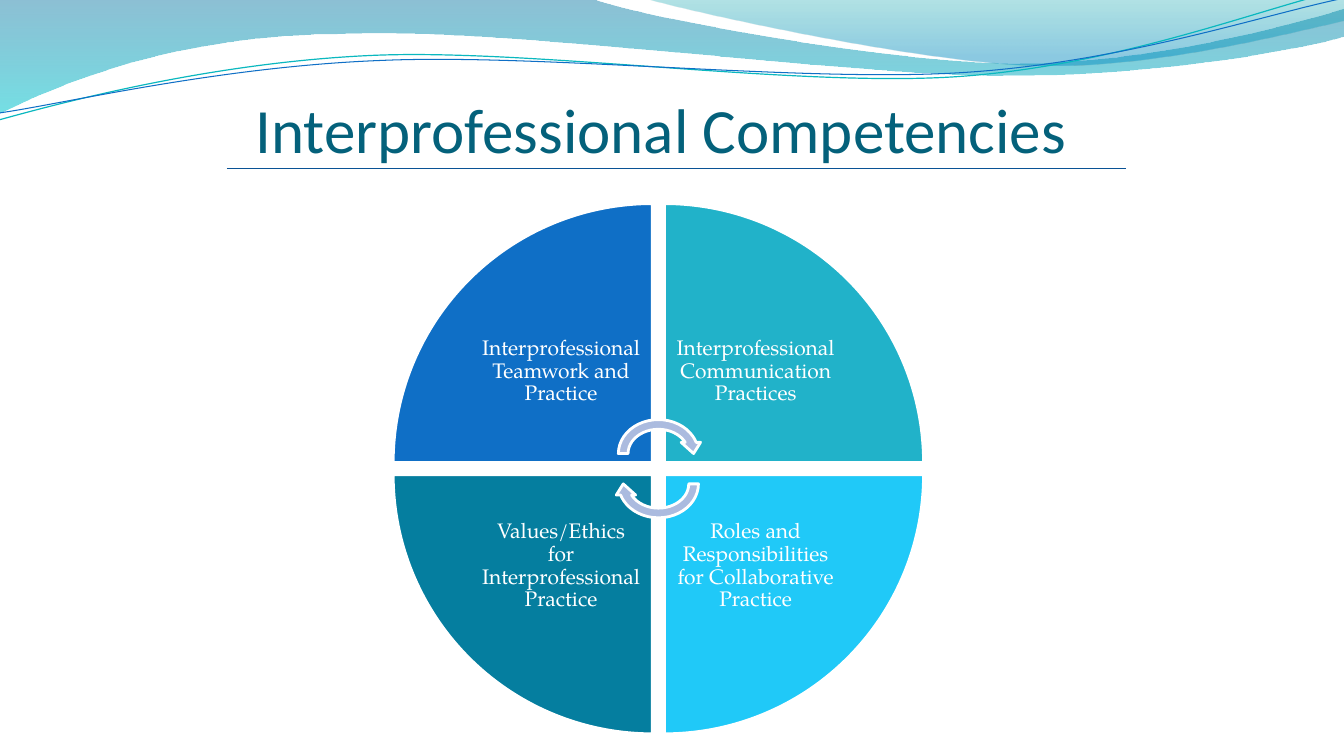
import math

from lxml import etree
from pptx import Presentation
from pptx.dml.color import RGBColor
from pptx.enum import shapes, text
from pptx.oxml import ns
from pptx.util import Inches, Pt

COLORS = {
    "white": "FFFFFF", "title": "04617B", "rule": "095295", "arrow": "ABBBDF",
    "blue": "0F6FC6", "teal": "21B2C9", "sky": "20C9F8", "petrol": "057E9F",
    "wave_blue": "0074A1", "wave_cyan": "00C6CF",
    "crest_teal": "00A1A9", "crest_blue": "008BBF", "line_teal": "0AB8BF",
}
BODY_FONT = "TeX Gyre Pagella"

WAVE = [(0, -0.01), (5.87, -0.01),
        (6.34, 0.17, 8.85, 0.63, 10.11, 0.63), (11.38, 0.63, 12.78, 0.26, 13.33, 0.09),
        (13.35, 0.36),
        (13.11, 0.44, 11.6, 0.76, 9.94, 0.75), (8.29, 0.75, 5.09, 0.28, 3.43, 0.34),
        (1.72, 0.35, 0.61, 0.83, -0.01, 1.13)]
CREST = [(6.39, -0.01),
         (6.79, 0.11, 9.09, 0.62, 10.25, 0.65), (11.41, 0.69, 12.82, 0.32, 13.33, 0.21),
         (13.33, 0)]
TEAL_LINE = [(-0.01, 1.19), (0.64, 1.01, 2.11, 0.62, 3.69, 0.55),
             (5.27, 0.48, 7.9, 0.87, 9.5, 0.76), (11.1, 0.65, 12.52, 0.08, 13.31, -0.1)]
BLUE_LINE = [(0, 1.12), (0.63, 1.03, 2.18, 0.66, 3.78, 0.6),
             (5.37, 0.53, 7.96, 0.82, 9.55, 0.72), (11.15, 0.62, 12.55, 0.14, 13.34, -0.02)]


def rgb(name):
    """Return the named colour."""
    return RGBColor.from_string(COLORS[name])


def turn(point, pivot, degrees):
    """Turn a point clockwise about a pivot."""
    a = math.radians(degrees)
    dx, dy = point[0] - pivot[0], point[1] - pivot[1]
    return (pivot[0] + dx * math.cos(a) - dy * math.sin(a),
            pivot[1] + dx * math.sin(a) + dy * math.cos(a))


def add_outline(s, left, top, path, close, pivot=(0, 0), tilt=0):
    """Draw a path of points and cubic curves, tilted about a pivot."""
    points = [turn(part[i:i + 2], pivot, tilt) for part in path
              for i in range(0, len(part), 2)]
    points = [(Inches(left + x), Inches(top + y)) for x, y in points]
    builder = s.shapes.build_freeform(*points[0], scale=1.0)
    builder.add_line_segments(points[1:], close=close)
    sp = builder.convert_to_shape()
    sp.shadow.inherit = False
    sp.rotation = -tilt % 360
    segments = iter(list(sp.element.iter(ns.qn("a:lnTo"))))
    for part in path[1:]:
        segment = next(segments)
        if len(part) == 6:
            curve = etree.Element(ns.qn("a:cubicBezTo"))
            segment.addprevious(curve)
            for step in (segment, next(segments), next(segments)):
                curve.append(step[0])
                step.getparent().remove(step)
    return sp


def add_waves(s, left, top):
    """Draw the banner of two gradient waves and two thin curves."""
    bands = [(WAVE, [("wave_blue", 0, 45), ("wave_cyan", 1, 55)]),
             (CREST, [("crest_teal", 0, 30), ("crest_blue", 0.8, 45)])]
    for path, stops in bands:
        sp = add_outline(s, left, top, path, True)
        sp.line.fill.background()
        sp.fill.gradient()
        sp.fill.gradient_angle = 270
        for stop, (color, position, _) in zip(sp.fill.gradient_stops, stops):
            stop.color.rgb = rgb(color)
            stop.position = position
        for clr, (_, _, opacity) in zip(sp.element.iter(ns.qn("a:srgbClr")), stops):
            etree.SubElement(clr, ns.qn("a:alpha"), val=str(opacity * 1000))
    curves = [(TEAL_LINE, "line_teal", 0.85, (6.65, 0.57)),
              (BLUE_LINE, "blue", 0.75, (6.67, 0.59))]
    for path, color, width, pivot in curves:
        sp = add_outline(s, left, top, path, False, pivot, 2.7)
        sp.fill.background()
        sp.line.color.rgb = rgb(color)
        sp.line.width = Pt(width)


def add_run(p, words, font, size, color):
    """Add one formatted run to a centred paragraph."""
    p.alignment = text.PP_ALIGN.CENTER
    r = p.add_run()
    r.text = words
    r.font.name = font
    r.font.size = Pt(size)
    r.font.color.rgb = rgb(color)


def add_title(s, left, top, width, height):
    """Fill the title placeholder and underline it."""
    sp = s.shapes.title
    sp.left, sp.top, sp.width, sp.height = map(Inches, (left, top, width, height))
    tf = sp.text_frame
    tf.auto_size = text.MSO_AUTO_SIZE.NONE
    tf.word_wrap = True
    tf.vertical_anchor = text.MSO_ANCHOR.BOTTOM
    tf.margin_left = tf.margin_right = tf.margin_bottom = 0
    tf.margin_top = Inches(0.05)
    add_run(tf.paragraphs[0], "Interprofessional Competencies", "Calibri", 45, "title")
    y = Inches(top + height + 0.02)
    rule = s.shapes.add_connector(shapes.MSO_CONNECTOR.STRAIGHT, Inches(left + 0.17), y,
                                  Inches(left + width + 0.14), y)
    rule.line.color.rgb = rgb("rule")
    rule.line.width = Pt(0.75)
    etree.SubElement(rule.element.spPr, ns.qn("a:effectLst"))


def add_part(s, kind, left, top, width, height, color, rotation):
    """Add a flat preset shape with a white edge."""
    sp = s.shapes.add_shape(kind, *map(Inches, (left, top, width, height)))
    sp.shadow.inherit = False
    sp.rotation = rotation
    sp.fill.solid()
    sp.fill.fore_color.rgb = rgb(color)
    sp.line.color.rgb = rgb("white")
    sp.line.width = Pt(2)


def add_label(s, left, top, size, words):
    """Add a centred white label in a square box."""
    tf = s.shapes.add_textbox(*map(Inches, (left, top, size, size))).text_frame
    tf.word_wrap = True
    tf.vertical_anchor = text.MSO_ANCHOR.MIDDLE
    tf.margin_left = tf.margin_right = tf.margin_top = tf.margin_bottom = Inches(0.12)
    p = tf.paragraphs[0]
    p.line_spacing = 0.9
    add_run(p, words, BODY_FONT, 15, "white")


def add_cycle(s, left, top, size):
    """Draw four labelled quarter wedges with two arrows at the centre."""
    gap, label = 0.12, 1.81
    wedge = (size - gap) / 2
    quarters = [(0, 0, "blue", "Interprofessional Teamwork and Practice"),
                (1, 0, "teal", "Interprofessional Communication Practices"),
                (1, 1, "sky", "Roles and Responsibilities for Collaborative Practice"),
                (0, 1, "petrol", "Values/Ethics for Interprofessional Practice")]
    for i, (col, row, color, words) in enumerate(quarters):
        x, y = left + col * (wedge + gap), top + row * (wedge + gap)
        add_part(s, shapes.MSO_SHAPE.PIE_WEDGE, x, y, wedge, wedge, color, i * 90)
        inset = wedge - label
        add_label(s, x + (1 - col) * inset, y + (1 - row) * inset, label, words)
    width, height, shift = 0.89, 0.77, 0.15
    x, y = left + (size - width) / 2, top + (size - height) / 2
    for offset, rotation in [(-shift, 0), (shift, 180)]:
        add_part(s, shapes.MSO_SHAPE.CIRCULAR_ARROW, x, y + offset, width, height,
                 "arrow", rotation)


def main():
    """Build the slide and save it."""
    prs = Presentation()
    prs.slide_width, prs.slide_height = Inches(13.33), Inches(7.5)
    s = prs.slides.add_slide(prs.slide_layouts[5])
    s.background.fill.solid()
    s.background.fill.fore_color.rgb = rgb("white")
    add_waves(s, 0, 0)
    add_title(s, 2.08, 0.83, 8.95, 0.82)
    add_cycle(s, 3.9, 2.02, 5.26)
    prs.save("out.pptx")


if __name__ == "__main__":
    main()
